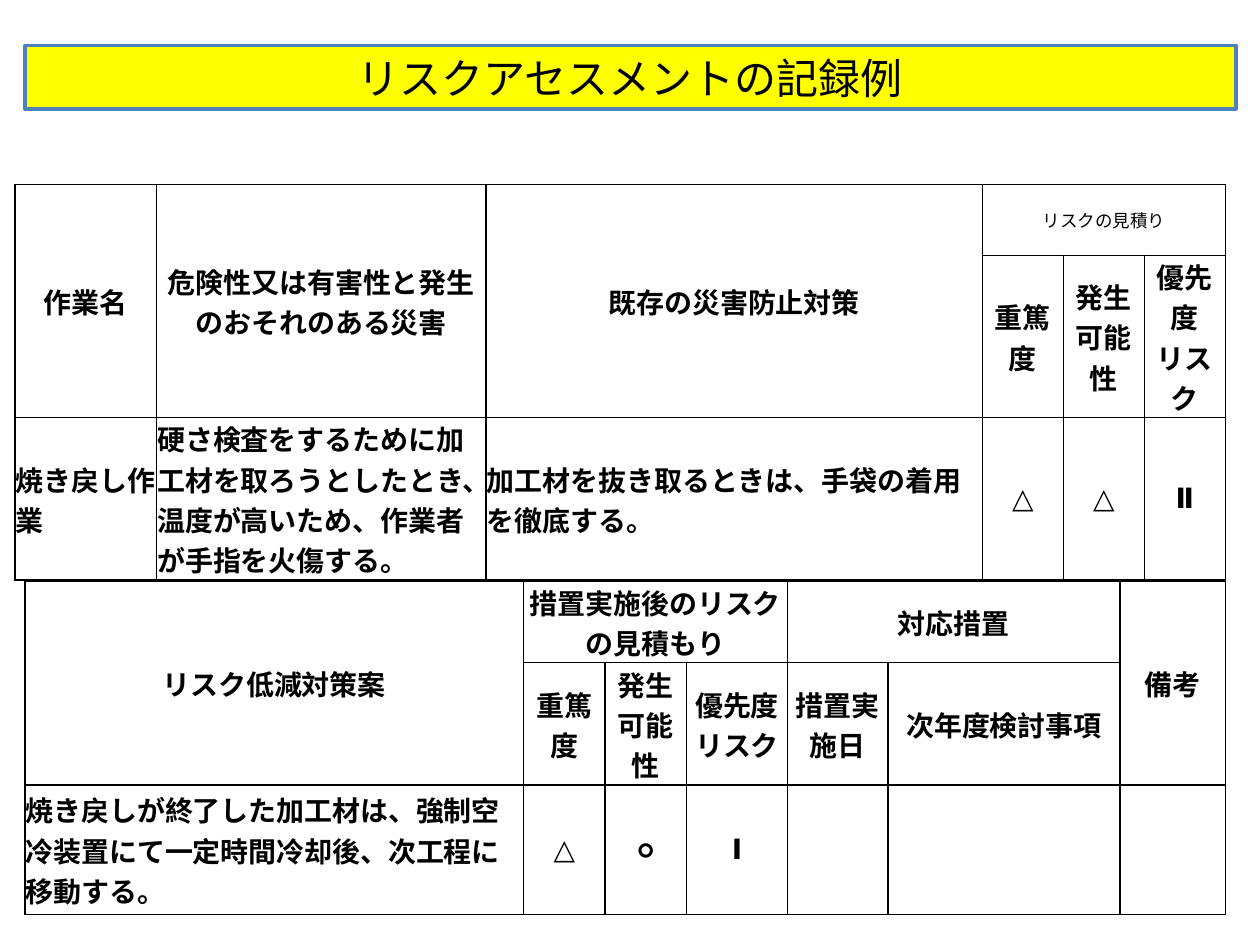
from lxml import etree
from pptx import Presentation
from pptx.dml.color import RGBColor
from pptx.enum import text
from pptx.oxml.ns import qn
from pptx.util import Pt

FONT = "Calibri"
BLACK = "000000"


def color(value):
    return RGBColor.from_string(value)


def add_span(para, words, size, bold):
    span = para.add_run()
    span.text = words
    span.font.name = FONT
    span.font.size = Pt(size)
    span.font.bold = bold
    span.font.color.rgb = color(BLACK)


def add_borders(cell, width=1):
    properties = cell._tc.get_or_add_tcPr()
    for index, side in enumerate(("lnL", "lnR", "lnT", "lnB")):
        line = etree.Element(qn("a:" + side), w=str(Pt(width)))
        fill = etree.SubElement(line, qn("a:solidFill"))
        etree.SubElement(fill, qn("a:srgbClr"), val=BLACK)
        properties.insert(index, line)


def fill_cell(cell, words, align, size):
    cell.vertical_anchor = text.MSO_ANCHOR.MIDDLE
    cell.margin_left = cell.margin_right = cell.margin_top = Pt(0.4)
    cell.margin_bottom = Pt(0)
    for index, line in enumerate(words.split("\n") if words else []):
        frame = cell.text_frame
        para = frame.paragraphs[0] if index == 0 else frame.add_paragraph()
        para.alignment = align
        add_span(para, line, size, bold=size > 10)


def add_title(page, box, words):
    title = page.shapes.title
    title.left, title.top, title.width, title.height = map(Pt, box)
    title.fill.solid()
    title.fill.fore_color.rgb = color("FFFF00")
    title.line.color.rgb = color("4F81BD")
    title.line.width = Pt(2)
    frame = title.text_frame
    frame.auto_size = text.MSO_AUTO_SIZE.NONE
    frame.vertical_anchor = text.MSO_ANCHOR.MIDDLE
    para = frame.paragraphs[0]
    para.alignment = text.PP_ALIGN.CENTER
    add_span(para, words, 24, bold=False)


def add_record(page, box, columns, rows, content, merges, left_columns, small=()):
    """Two heading rows and one entry row; merges are (top, left, bottom, right)."""
    table = page.shapes.add_table(len(rows), len(columns), *map(Pt, box)).table
    table.first_row = table.horz_banding = False
    for column, width in zip(table.columns, columns):
        column.width = Pt(width)
    for row, height in zip(table.rows, rows):
        row.height = Pt(height)
    for top, left, bottom, right in merges:
        table.cell(top, left).merge(table.cell(bottom, right))

    last = len(rows) - 1
    for r, line in enumerate(content):
        for c, words in enumerate(line):
            cell = table.cell(r, c)
            is_entry = r == last and c in left_columns
            align = text.PP_ALIGN.LEFT if is_entry else text.PP_ALIGN.CENTER
            fill_cell(cell, words, align, 10 if words in small else 16)
            cell.fill.background()
            add_borders(cell)


def main():
    deck = Presentation()
    deck.slide_width, deck.slide_height = Pt(720), Pt(540)
    page = deck.slides.add_slide(deck.slide_layouts[5])

    # Risk estimate before measures
    add_record(
        page, (8.6, 105.4, 692, 226),
        columns=[80.9, 188.4, 283.5, 46.3, 46.3, 46.3],
        rows=[40.5, 92.6, 92.9],
        content=[
            ["作業名", "危険性又は有害性と発生のおそれのある災害",
             "既存の災害防止対策", "リスクの見積り", "", ""],
            ["", "", "", "重篤度", "発生可能性", "優先度\nリスク"],
            ["焼き戻し作業",
             "硬さ検査をするために加工材を取ろうとしたとき、"
             "温度が高いため、作業者が手指を火傷する。",
             "加工材を抜き取るときは、手袋の着用を徹底する。",
             "△", "△", "Ⅱ"],
        ],
        merges=[(0, 0, 1, 0), (0, 1, 1, 1), (0, 2, 1, 2), (0, 3, 0, 5)],
        left_columns=(0, 1, 2), small=("リスクの見積り",))

    # Risk estimate after measures
    add_record(
        page, (14.2, 332.2, 686.2, 190.5),
        columns=[285, 46.6, 46.6, 57.6, 57.6, 132.4, 60.4],
        rows=[46.5, 69.8, 74.2],
        content=[
            ["リスク低減対策案", "措置実施後のリスクの見積もり", "", "",
             "対応措置", "", "備考"],
            ["", "重篤度", "発生可能性", "優先度\nリスク",
             "措置実施日", "次年度検討事項", ""],
            ["焼き戻しが終了した加工材は、強制空冷装置にて"
             "一定時間冷却後、次工程に移動する。",
             "△", "○", "Ⅰ", "", "", ""],
        ],
        merges=[(0, 0, 1, 0), (0, 1, 0, 3), (0, 4, 0, 5), (0, 6, 1, 6)],
        left_columns=(0,))

    # Heading bar
    add_title(page, (14.2, 26, 692, 36.3), "リスクアセスメントの記録例")
    deck.save("out.pptx")


if __name__ == "__main__":
    main()
